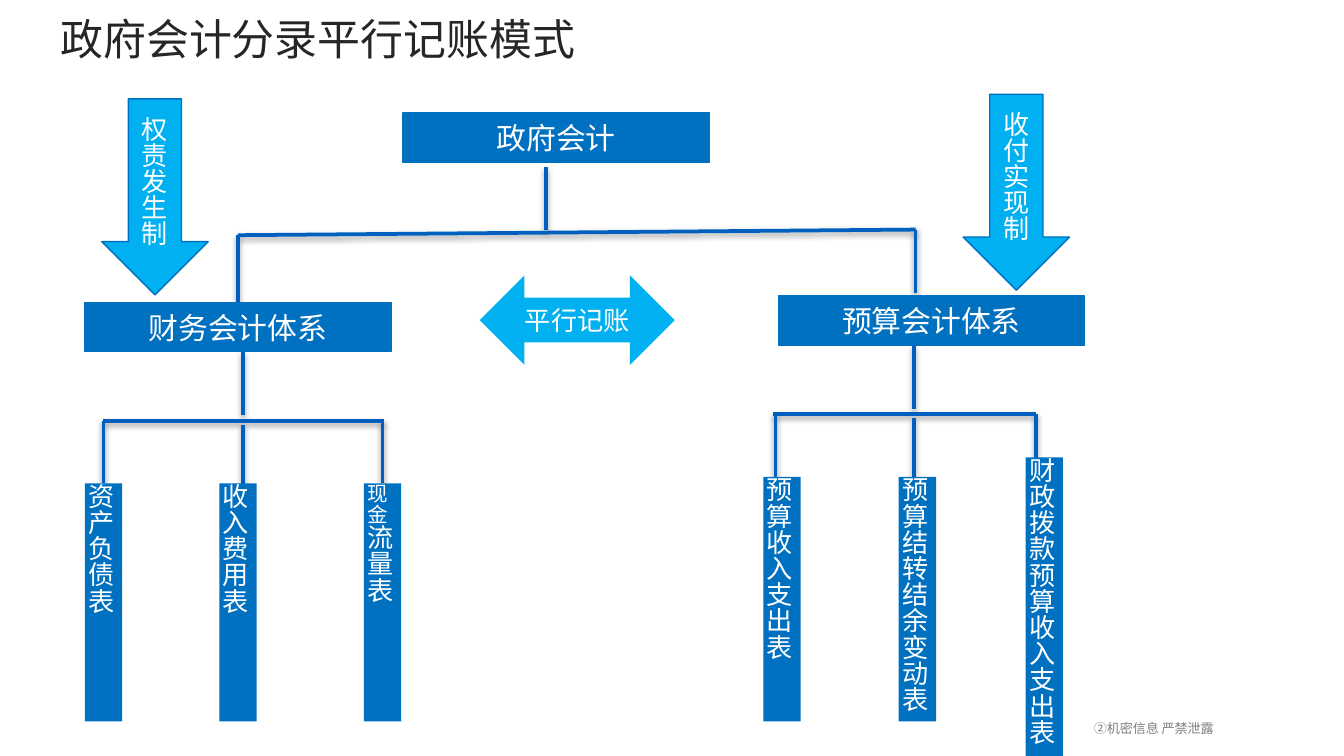
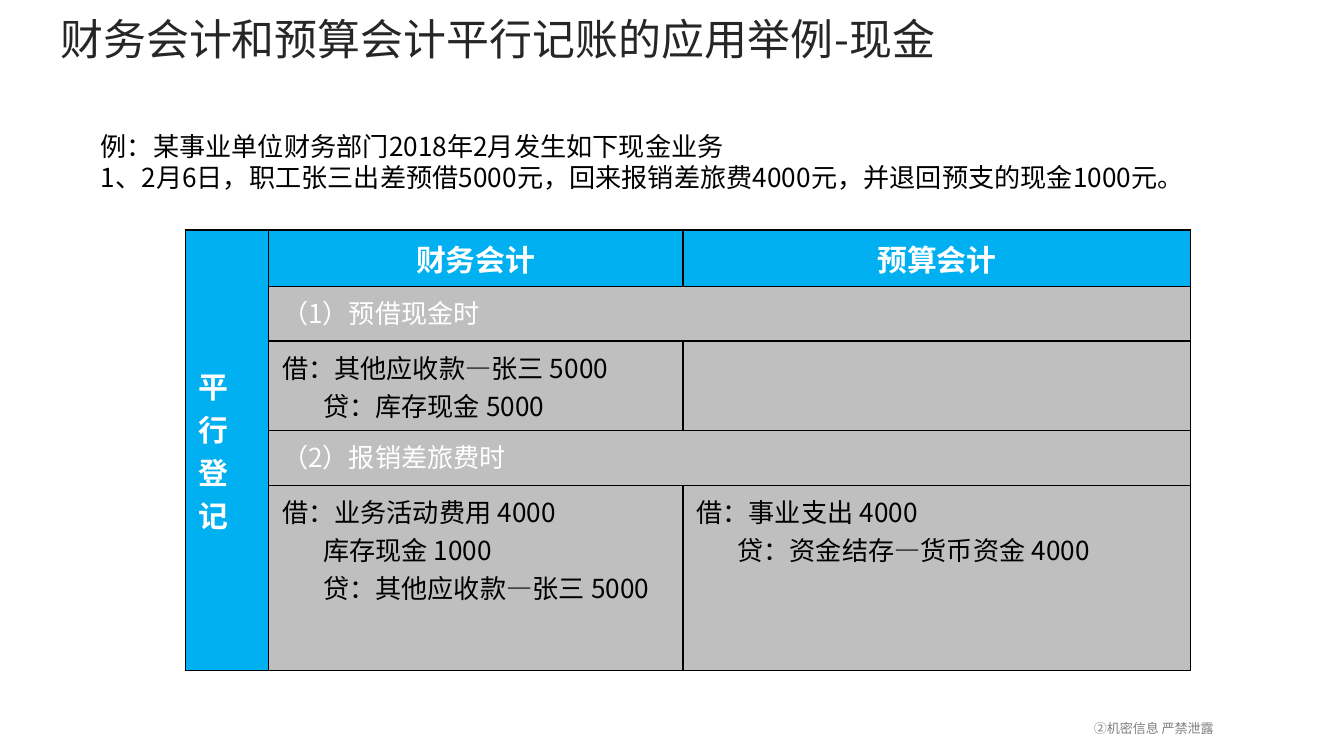
from lxml import etree
from pptx import Presentation
from pptx import util as u
from pptx.dml import color
from pptx.enum import shapes, text
from pptx.oxml import ns

Pt = u.Pt
FONT = "Noto Sans CJK SC"
BLUE, SKY, LINE = "0070C0", "00B0F0", "0060C0"
GREY, WHITE, BLACK = "BFBFBF", "FFFFFF", "000000"
SHAPE, ALIGN, ANCHOR = shapes.MSO_SHAPE, text.PP_ALIGN, text.MSO_ANCHOR


def rgb(value):
    return color.RGBColor.from_string(value)


def sub(parent, tag, **attributes):
    return etree.SubElement(parent, ns.qn(tag), attributes)


def write(frame, paragraphs, size=14, ink=WHITE, bold=False, align=ALIGN.LEFT,
          anchor=ANCHOR.MIDDLE, spacing=None, margins=None, vertical=False):
    """Fill a frame; a paragraph is a string or a list of (string, size) runs."""
    frame.word_wrap = True
    frame.vertical_anchor = anchor
    if margins is not None:
        across, down = margins
        frame.margin_left = frame.margin_right = Pt(across)
        frame.margin_top = frame.margin_bottom = Pt(down)
    if vertical:
        frame._txBody.bodyPr.set("vert", "eaVert")
    for index, content in enumerate(paragraphs):
        paragraph = frame.add_paragraph() if index else frame.paragraphs[0]
        paragraph.alignment = align
        if spacing:
            paragraph.line_spacing = spacing
        runs = [(content, size)] if isinstance(content, str) else content
        for words, run_size in runs:
            run = paragraph.add_run()
            run.text = words
            run.font.size = Pt(run_size)
            run.font.bold = bold
            run.font.color.rgb = rgb(ink)
            run.font.name = FONT
            sub(run._r.get_or_add_rPr(), "a:ea", typeface=FONT)


def textbox(slide, box, paragraphs, **form):
    frame = slide.shapes.add_textbox(*map(Pt, box)).text_frame
    write(frame, paragraphs, **form)


def block(slide, kind, box, paragraphs, fill=BLUE, outline=None, **form):
    shape = slide.shapes.add_shape(kind, *map(Pt, box))
    shape.shadow.inherit = False
    shape.fill.solid()
    shape.fill.fore_color.rgb = rgb(fill)
    if outline:
        shape.line.color.rgb = rgb(outline)
        shape.line.width = Pt(0.75)
    else:
        shape.line.fill.background()
    write(shape.text_frame, paragraphs, **form)
    return shape


def branch(slide, x1, y1, x2, y2):
    """Draw a tree line with its soft shadow below."""
    line = slide.shapes.add_connector(
        shapes.MSO_CONNECTOR.STRAIGHT, Pt(x1), Pt(y1), Pt(x2), Pt(y2))
    line.line.color.rgb = rgb(LINE)
    line.line.width = Pt(2)
    effects = sub(line._element.spPr, "a:effectLst")
    shadow = sub(effects, "a:outerShdw", blurRad=str(Pt(3.1)), dist=str(Pt(1.6)),
                 dir="5400000", rotWithShape="0")
    sub(sub(shadow, "a:srgbClr", val=BLACK), "a:alpha", val="38000")
    return line


def base_slide(deck, title):
    slide = deck.slides.add_slide(deck.slide_layouts[6])
    textbox(slide, (527, 379.5, 127.5, 19.5), ["②机密信息 严禁泄露"], size=7,
            ink="7F7F7F", align=ALIGN.RIGHT, spacing=Pt(10.5), margins=(4.3, 0.7))
    textbox(slide, (25.2, 1.5, 561.6, 38), [title], size=23, ink="262626")
    return slide


def heading(slide, x, y, name):
    return block(slide, SHAPE.RECTANGLE, (x, y, 164, 26.5), [name],
                 outline=BLUE, size=16, align=ALIGN.CENTER)


def basis_arrow(slide, x, y, name):
    block(slide, SHAPE.DOWN_ARROW, (x, y, 57, 105), [name], fill=SKY,
          outline=BLUE, align=ALIGN.CENTER, spacing=0.83)


def system(slide, x, y, name, stem, beam, legs, statements):
    """Draw an accounting system and its statements; offsets start at (x, y)."""
    head = heading(slide, x, y, name)
    foot = y + 26.5
    rail, leg_end = foot + 37, foot + 70.5
    branch(slide, x + stem, foot, x + stem, foot + 34)
    branch(slide, x + beam[0], rail, x + beam[1], rail)
    left, right = [branch(slide, x + leg, rail, x + leg, leg_end) for leg in legs]
    branch(slide, x + stem, foot + 39, x + stem, foot + 73.5)
    bars = [block(slide, SHAPE.RECTANGLE, (x + dx, leg_end - rise, 20, height),
                  [words], spacing=1.2, margins=(0, 0), vertical=True)
            for dx, rise, height, words in statements]
    for leg, bar in ((left, bars[0]), (right, bars[-1])):
        if (leg.end_x, leg.end_y) == (bar.left + bar.width // 2, bar.top):
            leg.end_connect(bar, 0)
    return head


def structure_slide(deck):
    slide = base_slide(deck, "政府会计分录平行记账模式")
    heading(slide, 216, 60.5, "政府会计")
    branch(slide, 292.5, 89.5, 292.5, 123)
    branch(slide, 127.5, 126, 490.5, 123)
    financial_drop = branch(slide, 127.5, 126, 127.5, 162)
    branch(slide, 490.5, 123, 490.5, 157)
    financial = system(
        slide, 45.5, 162, "财务会计体系", 84.8, (9.5, 160), (10, 159.5),
        [(0, 0, 127.5, "资产负债表"),
         (72, 0, 127.5, "收入费用表"),
         (149.5, 0, 127.5, [("现金", 11), ("流量表", 14)])])
    financial_drop.end_connect(financial, 0)
    system(
        slide, 417, 158.5, "预算会计体系", 72.6, (-3, 138), (-1.5, 138),
        [(-8, 0, 131, "预算收入支出表"),
         (64.5, 0, 131, "预算结转结余变动表"),
         (132.5, 10.5, 160, "财政拨款预算收入支出表")])
    basis_arrow(slide, 54.5, 53, "权责发生制")
    basis_arrow(slide, 516, 50.5, "收付实现制")
    block(slide, SHAPE.LEFT_RIGHT_ARROW, (257, 147.5, 104.5, 48), ["平行记账"],
          fill=SKY, align=ALIGN.CENTER)


def paint_cell(cell, fill):
    properties = cell._tc.get_or_add_tcPr()
    for side in ("a:lnL", "a:lnR", "a:lnT", "a:lnB"):
        border = sub(properties, side, w=str(Pt(1)))
        sub(sub(border, "a:solidFill"), "a:srgbClr", val=BLACK)
    cell.fill.solid()
    cell.fill.fore_color.rgb = rgb(fill)


def entry(cell, lines):
    """Write a journal entry whose lines after the first are indented."""
    write(cell.text_frame, lines, ink=BLACK, anchor=ANCHOR.TOP)
    for paragraph in cell.text_frame.paragraphs[1:]:
        paragraph._p.get_or_add_pPr().set("marL", str(Pt(22)))


def ledger(slide, x, y):
    widths, heights = (44.6, 222, 272), (30.3, 29.2, 48, 29.5, 99)
    table = slide.shapes.add_table(len(heights), len(widths), Pt(x), Pt(y),
                                   Pt(sum(widths)), Pt(sum(heights))).table
    table.first_row = table.horz_banding = False
    for column, width in zip(table.columns, widths):
        column.width = Pt(width)
    for row, height in zip(table.rows, heights):
        row.height = Pt(height)
    for r in range(len(heights)):
        for c in range(len(widths)):
            paint_cell(table.cell(r, c), SKY if r == 0 or c == 0 else GREY)
    table.cell(0, 0).merge(table.cell(4, 0))
    write(table.cell(0, 0).text_frame, list("平行登记"), size=16, bold=True)
    table.cell(0, 0).vertical_anchor = ANCHOR.MIDDLE
    for c, name in enumerate(("财务会计", "预算会计"), 1):
        write(table.cell(0, c).text_frame, [name], size=16, bold=True,
              align=ALIGN.CENTER, anchor=ANCHOR.TOP)
    for r, step in ((1, "（1）预借现金时"), (3, "（2）报销差旅费时")):
        table.cell(r, 1).merge(table.cell(r, 2))
        write(table.cell(r, 1).text_frame, [step], anchor=ANCHOR.TOP)
    entry(table.cell(2, 1), ["借：其他应收款—张三 5000", "贷：库存现金 5000"])
    entry(table.cell(4, 1), ["借：业务活动费用 4000", "库存现金 1000",
                             "贷：其他应收款—张三 5000"])
    entry(table.cell(4, 2), ["借：事业支出 4000", "贷：资金结存—货币资金 4000"])


def example_slide(deck):
    slide = base_slide(deck, "财务会计和预算会计平行记账的应用举例-现金")
    ledger(slide, 99.3, 123.2)
    textbox(slide, (54, 67, 612, 39),
            ["例：某事业单位财务部门2018年2月发生如下现金业务",
             "1、2月6日，职工张三出差预借5000元，回来报销差旅费4000元，"
             "并退回预支的现金1000元。"],
            ink=BLACK, margins=(0, 0))


def main():
    deck = Presentation()
    deck.slide_width, deck.slide_height = Pt(720), Pt(405)
    structure_slide(deck)
    example_slide(deck)
    deck.save("out.pptx")


if __name__ == "__main__":
    main()
